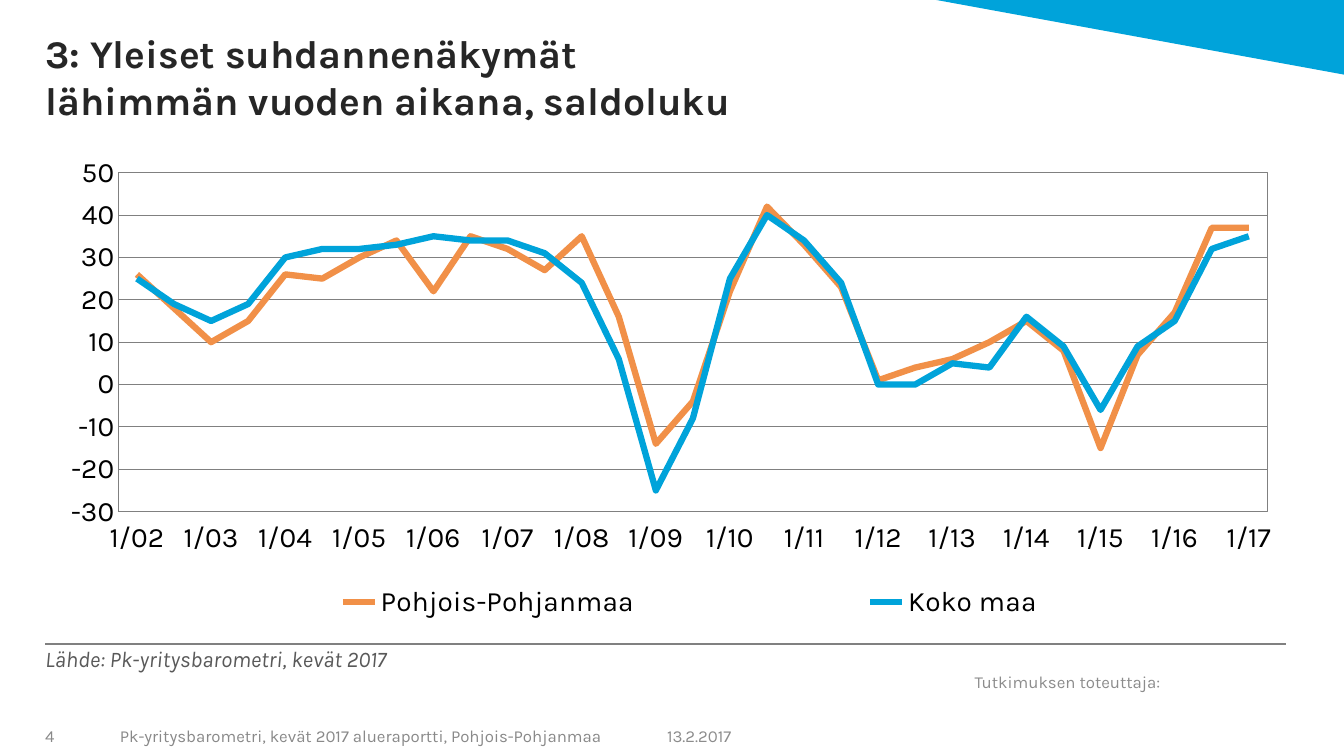
from collections import namedtuple
from dataclasses import dataclass

from pptx import Presentation, util as u
from pptx.chart import data as cd
from pptx.dml import color as col
from pptx.enum import chart as ch, shapes as sh, text as tx
from pptx.oxml import parse_xml
from pptx.oxml import ns

Box = namedtuple("Box", "x y w h")


@dataclass(frozen=True)
class Theme:
    """Hold the colours, font and type sizes of the slide."""
    font: str = "Karla"
    blue: str = "00A3DA"
    orange: str = "F19048"
    black: str = "000000"
    dark: str = "262626"
    mid: str = "595959"
    rule: str = "808080"
    pale: str = "8C8C8C"
    foot: str = "898989"
    head: int = 28
    axis: int = 20
    note: int = 16
    small: int = 12


T = Theme()
EDGE, WIDE = 1.14, 31.27
YEARS = [f"1/{year:02}" for year in range(2, 18)]
CATS = [cat for year in YEARS for cat in (year, "")][:-1]
SERIES = {
    "Pohjois-Pohjanmaa": (T.orange, [
        26, 18, 10, 15, 26, 25, 30, 34, 22, 35, 32, 27, 35, 16, -14, -4,
        22, 42, 33, 23, 1, 4, 6, 10, 15, 8, -15, 7, 17, 37, 37]),
    "Koko maa": (T.blue, [
        25, 19, 15, 19, 30, 32, 32, 33, 35, 34, 34, 31, 24, 6, -25, -8,
        25, 40, 34, 24, 0, 0, 5, 4, 16, 9, -6, 9, 15, 32, 35]),
}


def rgb(code):
    """Turn a hex code into a colour."""
    return col.RGBColor.from_string(code)


def cms(box):
    """Turn a box into four lengths."""
    return [u.Cm(side) for side in box]


def style(font, size, color, bold=False, slant=False):
    """Set the look of a font."""
    font.name, font.size = T.font, u.Pt(size)
    font.bold, font.italic = bold, slant
    font.color.rgb = rgb(color)


def stroke(line, color, width):
    """Set the colour and width of a line."""
    line.color.rgb, line.width = rgb(color), u.Pt(width)


def write(shape, words, size, color, anchor="MIDDLE", inset=None, **look):
    """Put one formatted paragraph into a shape."""
    frame = shape.text_frame
    frame.word_wrap, frame.auto_size = True, tx.MSO_AUTO_SIZE.NONE
    frame.vertical_anchor = tx.MSO_ANCHOR[anchor]
    if inset:
        (frame.margin_left, frame.margin_top,
         frame.margin_right, frame.margin_bottom) = cms(inset)
    frame.text = words
    para = frame.paragraphs[0]
    para.alignment, para.space_before = tx.PP_ALIGN.LEFT, u.Pt(0)
    for run in para.runs:
        style(run.font, size, color, **look)


def place(shape, box):
    """Move a shape into a box."""
    shape.left, shape.top, shape.width, shape.height = cms(box)


def label(slide, box, words, color, **look):
    """Add a small text box."""
    write(slide.shapes.add_textbox(*cms(box)), words, T.small, color, **look)


def layout(box, inner=False):
    """Make a manual chart layout from fractions."""
    target = '<c:layoutTarget val="inner"/>' if inner else ""
    sides = "".join(f'<c:{key} val="{val}"/>' for key, val in zip("xywh", box))
    return parse_xml(
        f'<c:layout {ns.nsdecls("c")}><c:manualLayout>{target}'
        '<c:xMode val="edge"/><c:yMode val="edge"/>'
        f'{sides}</c:manualLayout></c:layout>')


def clear(parent, tag):
    """Remove the children of one kind."""
    for old in parent.findall(ns.qn(tag)):
        parent.remove(old)


def set_layout(parent, spot, item):
    """Replace the layout of a chart part."""
    clear(parent, "c:layout")
    parent.insert(spot, item)


def corner(slide, box):
    """Draw the blue wedge at the top right."""
    wedge = slide.shapes.add_shape(sh.MSO_SHAPE.RIGHT_TRIANGLE, *cms(box))
    wedge.rotation = 180
    wedge.shadow.inherit = False
    wedge.fill.solid()
    wedge.fill.fore_color.rgb = rgb(T.blue)
    wedge.line.fill.background()


def header(slide, box):
    """Fill the title placeholder."""
    place(slide.shapes.title, box)
    write(slide.shapes.title,
          "3: Yleiset suhdannenäkymät \vlähimmän vuoden aikana, saldoluku",
          T.head, T.dark, anchor="BOTTOM", inset=(0, 0, 0, 0), bold=True)


def axes(chart):
    """Format both axes."""
    cats, vals = chart.category_axis, chart.value_axis
    for axis in (cats, vals):
        axis.major_tick_mark = axis.minor_tick_mark = ch.XL_TICK_MARK.NONE
        stroke(axis.format.line, T.rule, 0.75)
        clear(axis._element, "c:txPr")
    cats.tick_label_position = ch.XL_TICK_LABEL_POSITION.LOW
    cats._element.find(ns.qn("c:noMultiLvlLbl")).addprevious(
        parse_xml(f'<c:tickLblSkip {ns.nsdecls("c")} val="1"/>'))
    vals.minimum_scale, vals.maximum_scale, vals.major_unit = -30, 50, 10
    vals.tick_labels.number_format = "0"
    vals.tick_labels.number_format_is_linked = False
    vals.has_major_gridlines = True
    stroke(vals.major_gridlines.format.line, T.rule, 0.75)


def trend(slide, box):
    """Draw the line chart with its legend."""
    data = cd.CategoryChartData(number_format="0")
    data.categories = CATS
    for name, (_, vals) in SERIES.items():
        data.add_series(name, vals)
    chart = slide.shapes.add_chart(
        ch.XL_CHART_TYPE.LINE, *cms(box), data).chart
    chart.has_title = False
    style(chart.font, T.axis, T.black)
    axes(chart)
    chart.plots[0].vary_by_categories = False
    for line, (color, _) in zip(chart.plots[0].series, SERIES.values()):
        line.smooth = False
        line.marker.style = ch.XL_MARKER_STYLE.NONE
        stroke(line.format.line, color, 4.5)
    chart.has_legend = True
    legend = chart.legend
    legend.position = ch.XL_LEGEND_POSITION.RIGHT
    legend.include_in_layout = False
    style(legend.font, T.axis, T.black)
    set_layout(legend._element, 1, layout((0.057, 0.887, 0.925, 0.1)))
    area = chart._chartSpace.chart.plotArea
    set_layout(area, 0, layout((0.059, 0.033, 0.926, 0.714), inner=True))
    area.append(parse_xml(
        f'<c:spPr {ns.nsdecls("c", "a")}><a:noFill/><a:ln w="9525"><a:solidFill>'
        f'<a:srgbClr val="{T.rule}"/></a:solidFill></a:ln></c:spPr>'))


def source(slide, box):
    """Draw the rule and the source note below it."""
    rule = slide.shapes.add_connector(
        sh.MSO_CONNECTOR.STRAIGHT,
        *cms((box.x, box.y, box.x + box.w, box.y)))
    stroke(rule.line, T.rule, 1.5)
    rule._element.spPr.append(parse_xml(f'<a:effectLst {ns.nsdecls("a")}/>'))
    note = slide.placeholders[1]
    place(note, box._replace(y=box.y + 0.03, w=26.97))
    write(note, "Lähde: Pk-yritysbarometri, kevät 2017", T.note, T.mid,
          anchor="TOP", inset=(0, 0, 0, 0), slant=True)
    props = note.text_frame.paragraphs[0]._p.get_or_add_pPr()
    props.set("marL", "0")
    props.set("indent", "0")
    props.append(parse_xml(f'<a:buNone {ns.nsdecls("a")}/>'))
    label(slide, Box(box.x + 23.17, box.y + 0.43, 5.54, 1.04),
          "Tutkimuksen toteuttaja:", T.pale)


def footer(slide, box):
    """Write the page number, report name and date."""
    label(slide, box._replace(w=1.6), "4", T.foot, inset=(0, 0.13, 0.25, 0.13))
    label(slide, box._replace(x=box.x + 1.63, w=13.74),
          "Pk-yritysbarometri, kevät 2017 alueraportti, Pohjois-Pohjanmaa",
          T.foot)
    label(slide, box._replace(x=box.x + 15.42, w=3.38), "13.2.2017", T.pale)


def main():
    """Build and save the slide."""
    deck = Presentation()
    deck.slide_width, deck.slide_height = u.Cm(33.87), u.Cm(19.05)
    slide = deck.slides.add_slide(deck.slide_layouts[1])
    corner(slide, Box(23.6, 0, 10.27, 1.88))
    header(slide, Box(EDGE, 0, WIDE, 3.1))
    trend(slide, Box(EDGE, 3.93, WIDE, 11.99))
    source(slide, Box(EDGE, 16.23, WIDE, 1.09))
    footer(slide, Box(EDGE, 18.09, WIDE, 0.89))
    deck.save("out.pptx")


if __name__ == "__main__":
    main()
